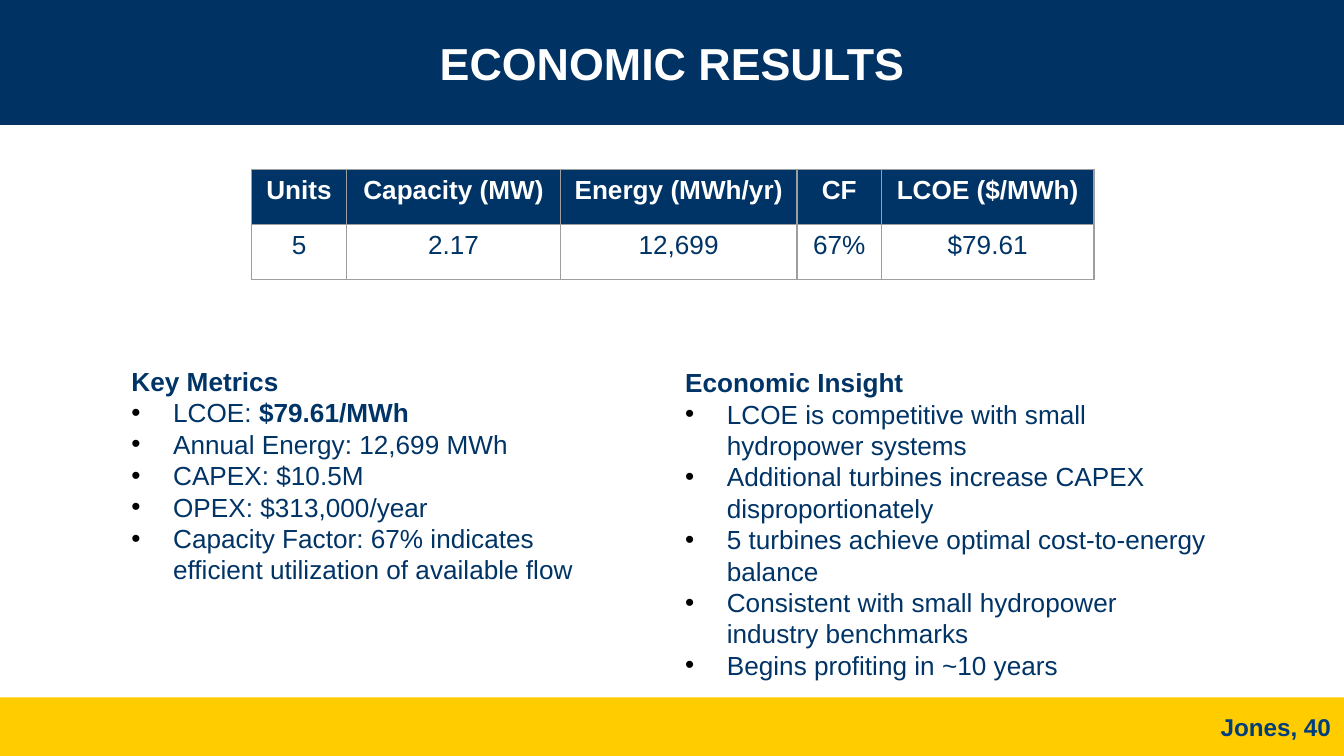
from dataclasses import dataclass

from lxml.etree import SubElement
from pptx import Presentation
from pptx.dml.color import RGBColor
from pptx.enum.shapes import MSO_SHAPE as Shape
from pptx.enum.text import MSO_ANCHOR as Anchor, PP_ALIGN as Align
from pptx.oxml.ns import qn
from pptx.util import Inches, Pt


@dataclass(frozen=True)
class Theme:
    """Colours, font and type sizes of the slide."""
    font: str = "Arial"
    header: str = "003264"
    navy: str = "003466"
    footer_text: str = "003D7C"
    gold: str = "FFCC00"
    white: str = "FFFFFF"
    border: str = "9E9E9E"
    bullet: str = "000000"
    title_size: int = 24
    body_size: int = 14
    footer_size: int = 13


THEME = Theme()

TABLE_ROWS = [
    ["Units", "Capacity (MW)", "Energy (MWh/yr)", "CF", "LCOE ($/MWh)"],
    ["5", "2.17", "12,699", "67%", "$79.61"],
]
COLUMN_WIDTHS = [0.71, 1.59, 1.76, 0.63, 1.58]
ROW_HEIGHT = 0.41

KEY_METRICS = [
    ("LCOE: ", "$79.61/MWh"),
    ("Annual Energy: 12,699 MWh",),
    ("CAPEX: $10.5M",),
    ("OPEX: $313,000/year",),
    ("Capacity Factor: 67% indicates efficient utilization of available flow",),
]
ECONOMIC_INSIGHT = [
    ("LCOE is competitive with small hydropower systems",),
    ("Additional turbines increase CAPEX disproportionately",),
    ("5 turbines achieve optimal cost-to-energy balance",),
    ("Consistent with small hydropower industry benchmarks",),
    ("Begins profiting in ~10 years",),
]


def style_run(r, size, color, bold=False):
    """Set the font, size, colour and weight of a run."""
    r.font.name = THEME.font
    r.font.size = Pt(size)
    r.font.bold = bold
    r.font.color.rgb = RGBColor.from_string(color)


def style_line(p, size, color, bold=False, align=Align.LEFT):
    """Align a paragraph and style all of its runs."""
    p.alignment = align
    for r in p.runs:
        style_run(r, size, color, bold)


def add_bar(s, top, height, color):
    """Add a full-width colour bar."""
    sp = s.shapes.add_shape(Shape.RECTANGLE, 0, Inches(top), Inches(10), Inches(height))
    sp.shadow.inherit = False
    sp.fill.solid()
    sp.fill.fore_color.rgb = RGBColor.from_string(color)
    sp.line.fill.background()
    return sp


def set_title(s, text, backdrop):
    """Place the title in front of its bar."""
    title = s.shapes.title
    backdrop._element.addnext(title._element)
    title.left, title.top = Inches(0.42), Inches(0)
    title.width, title.height = Inches(9.16), Inches(0.93)
    tf = title.text_frame
    tf.text = text
    tf.vertical_anchor = Anchor.MIDDLE
    style_line(tf.paragraphs[0], THEME.title_size, THEME.white, True, Align.CENTER)


def add_text_box(s, left, top, width, height):
    """Add a wrapping text box and return its text frame."""
    box = s.shapes.add_textbox(Inches(left), Inches(top), Inches(width), Inches(height))
    box.text_frame.word_wrap = True
    return box.text_frame


def add_footer(s, text):
    """Add the name and page number at the lower right."""
    tf = add_text_box(s, 8.88, 5.19, 1.12, 0.43)
    tf.text = text
    tf.vertical_anchor = Anchor.MIDDLE
    style_line(tf.paragraphs[0], THEME.footer_size, THEME.footer_text, True, Align.RIGHT)


def add_bullet(p):
    """Give a paragraph a hanging round bullet."""
    pPr = p._p.get_or_add_pPr()
    pPr.set("marL", str(Inches(0.31)))
    pPr.set("indent", str(-Inches(0.31)))
    color = SubElement(pPr, qn("a:buClr"))
    SubElement(color, qn("a:srgbClr"), val=THEME.bullet)
    SubElement(pPr, qn("a:buFont"), typeface=THEME.font)
    SubElement(pPr, qn("a:buChar"), char="•")


def add_bullet_list(s, box, heading, items):
    """Add a heading with bullets; the second part of an item is bold."""
    tf = add_text_box(s, *box)
    tf.text = heading
    style_line(tf.paragraphs[0], THEME.body_size, THEME.navy, True)
    for parts in items:
        p = tf.add_paragraph()
        add_bullet(p)
        for i, part in enumerate(parts):
            r = p.add_run()
            r.text = part
            style_run(r, THEME.body_size, THEME.navy, i == 1)


def set_borders(cell):
    """Draw a thin line on all four sides of a cell."""
    tcPr = cell._tc.get_or_add_tcPr()
    for side in ("L", "R", "T", "B"):
        ln = SubElement(tcPr, qn(f"a:ln{side}"), w=str(Pt(0.75)))
        fill = SubElement(ln, qn("a:solidFill"))
        SubElement(fill, qn("a:srgbClr"), val=THEME.border)


def fill_cell(cell, text, is_header):
    """Write and format one table cell."""
    cell.text = text
    set_borders(cell)
    if is_header:
        cell.fill.solid()
        cell.fill.fore_color.rgb = RGBColor.from_string(THEME.navy)
    else:
        cell.fill.background()
    color = THEME.white if is_header else THEME.navy
    style_line(cell.text_frame.paragraphs[0], THEME.body_size, color, is_header, Align.CENTER)


def add_results_table(s):
    """Add the table of economic results."""
    rows, cols = len(TABLE_ROWS), len(COLUMN_WIDTHS)
    table = s.shapes.add_table(
        rows, cols, Inches(1.87), Inches(1.26),
        Inches(sum(COLUMN_WIDTHS)), Inches(rows * ROW_HEIGHT)).table
    table.horz_banding = False
    for column, width in zip(table.columns, COLUMN_WIDTHS):
        column.width = Inches(width)
    for i, values in enumerate(TABLE_ROWS):
        table.rows[i].height = Inches(ROW_HEIGHT)
        for j, value in enumerate(values):
            fill_cell(table.cell(i, j), value, i == 0)


def main():
    """Build the 16:9 slide and save it."""
    prs = Presentation()
    prs.slide_width = Inches(10)
    prs.slide_height = prs.slide_width * 9 // 16
    s = prs.slides.add_slide(prs.slide_layouts[5])
    add_bar(s, 5.19, 0.44, THEME.gold)
    header = add_bar(s, 0, 0.93, THEME.header)
    set_title(s, "ECONOMIC RESULTS", header)
    add_footer(s, "Jones, 40")
    add_results_table(s)
    add_bullet_list(s, (0.88, 2.67, 3.79, 1.75), "Key Metrics", KEY_METRICS)
    add_bullet_list(s, (5, 2.68, 4.12, 2.46), "Economic Insight", ECONOMIC_INSIGHT)
    prs.save("out.pptx")


if __name__ == "__main__":
    main()
